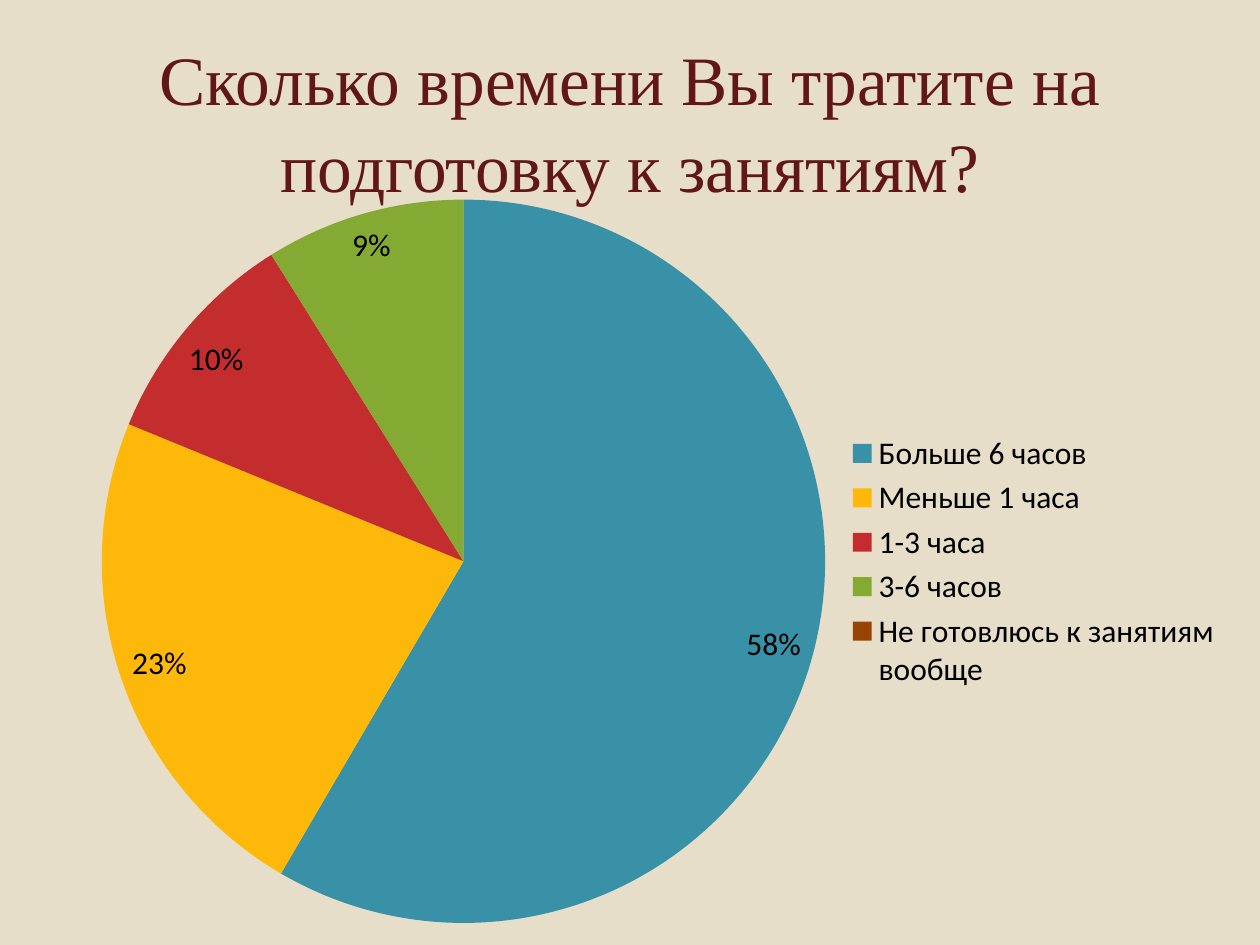
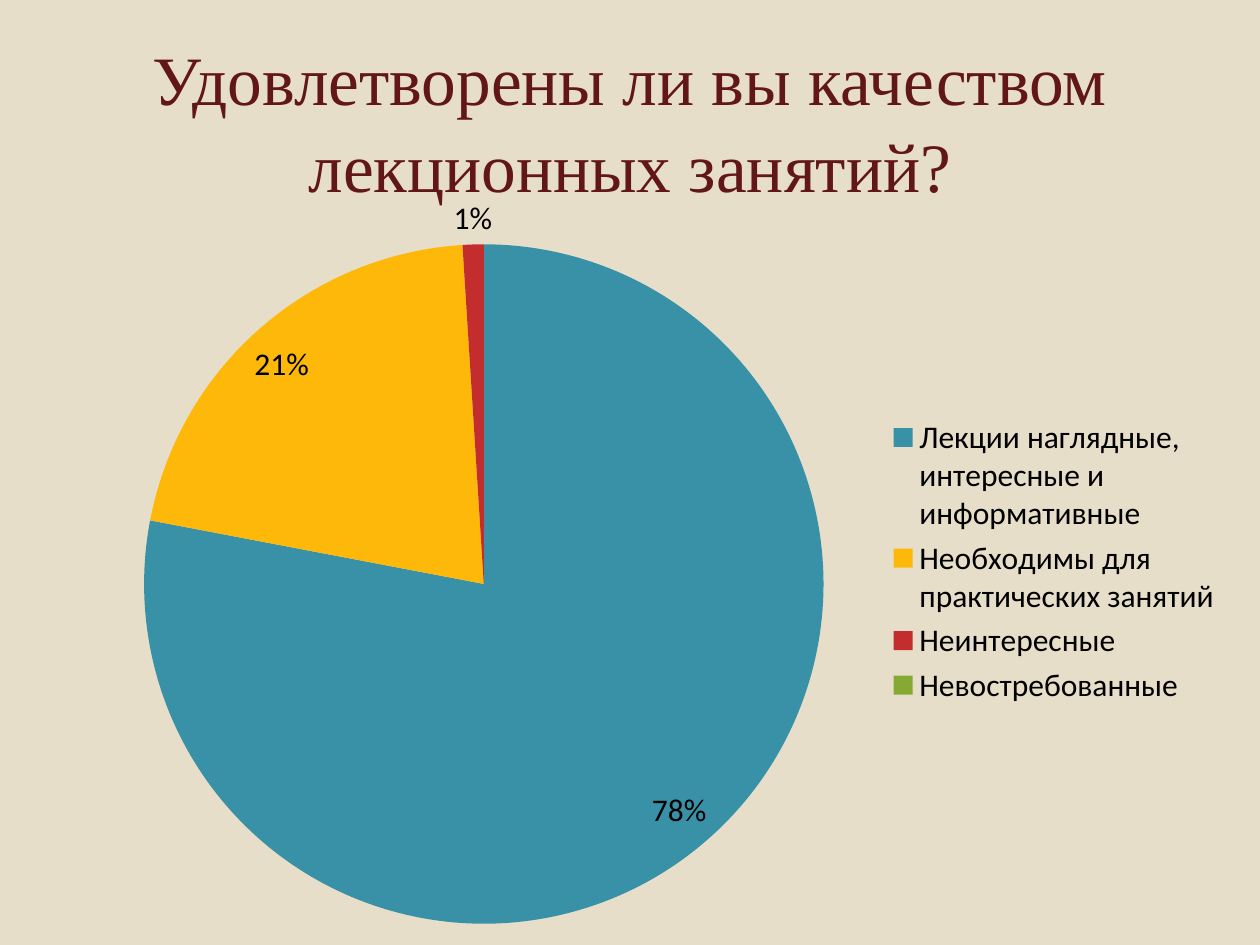
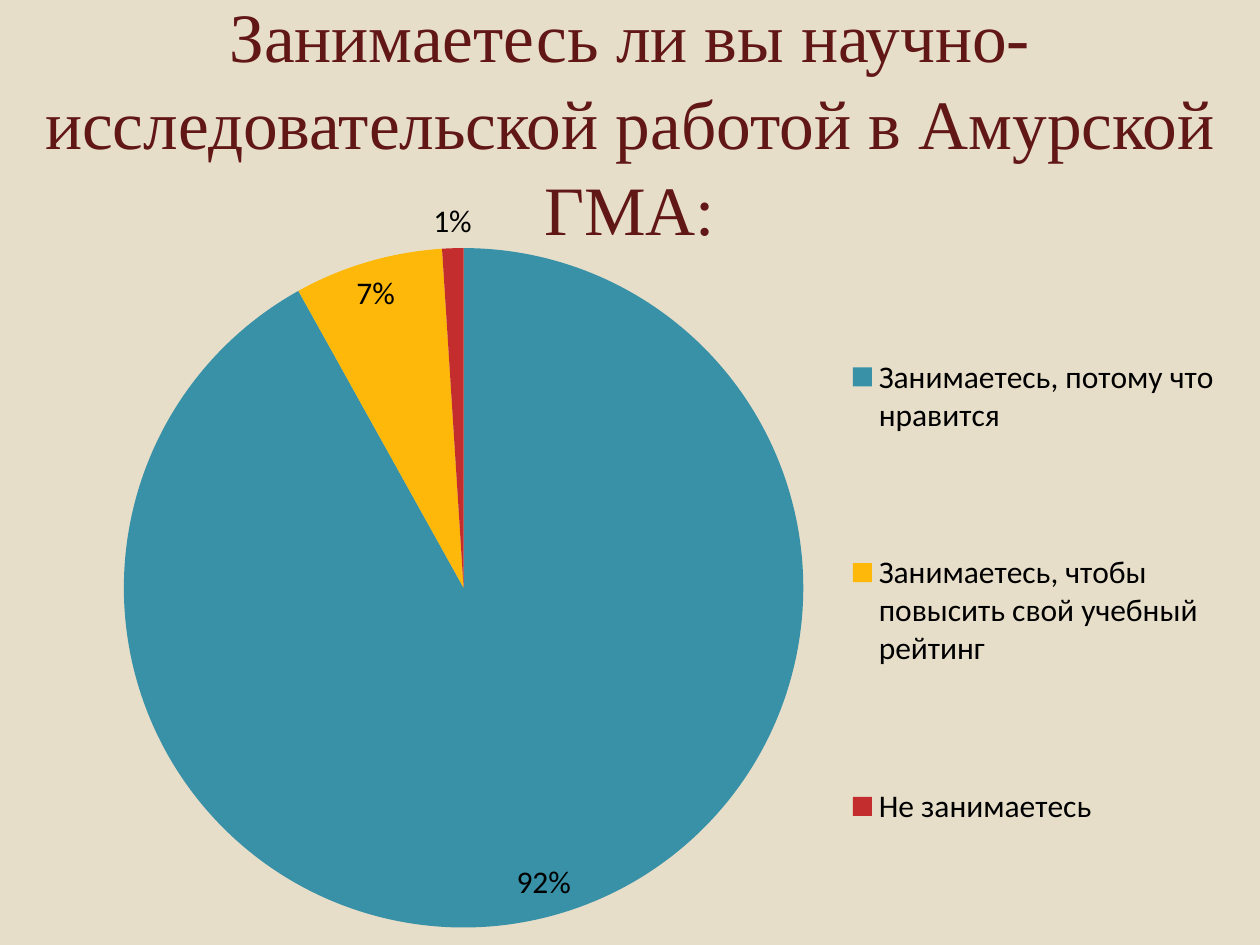
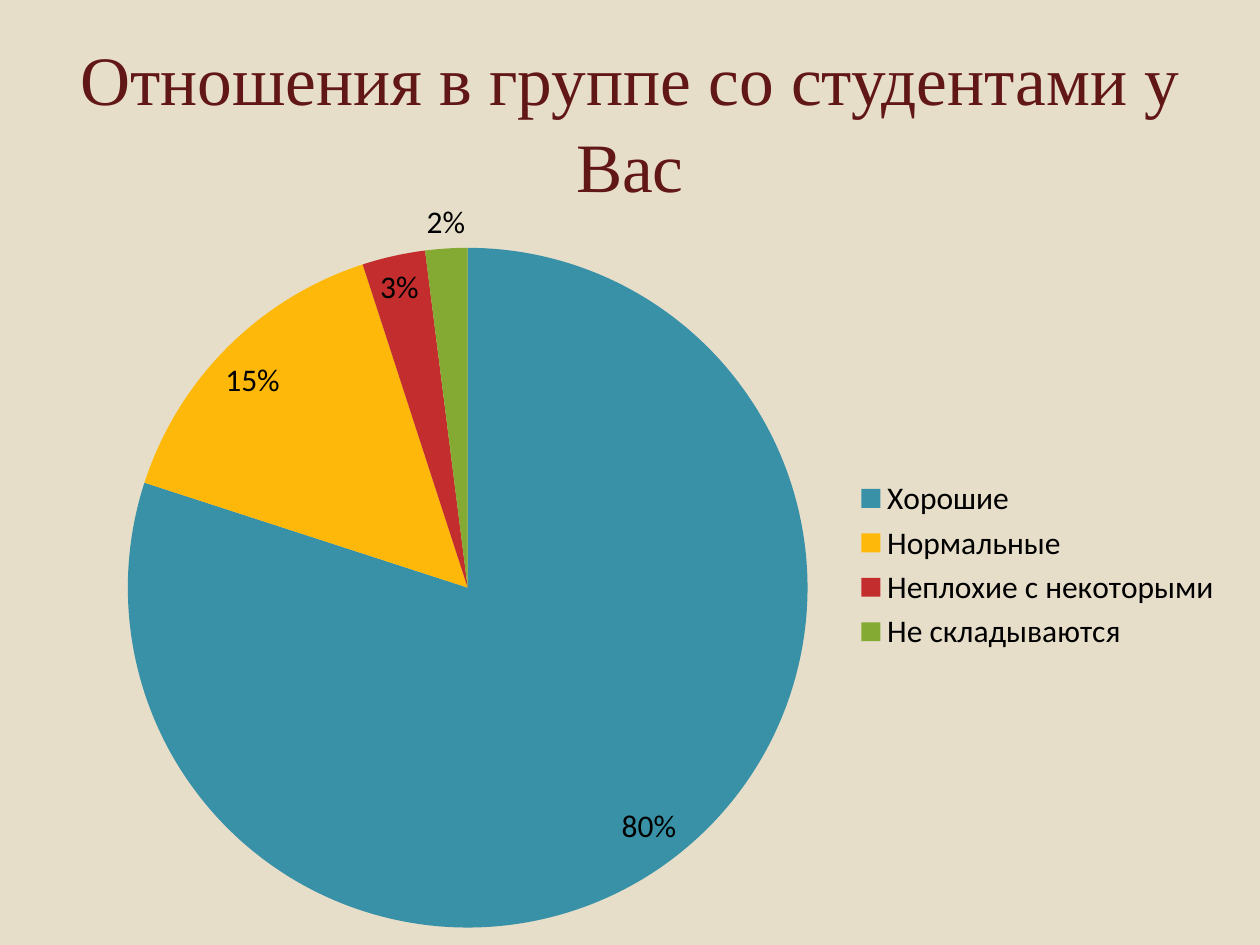
import pptx
import pptx.chart.data
import pptx.dml.color
import pptx.enum.chart
import pptx.enum.text
import pptx.oxml
import pptx.oxml.ns
import pptx.util

# Shared style
COLORS = {"background": "E7DEC9", "title": "621717", "text": "000000"}
SLICE_COLORS = ["3891A7", "FEB80A", "C32D2E", "84AA33", "964305"]
SLIDE_WIDTH, SLIDE_HEIGHT = 10, 7.5
TITLE_TOP, TITLE_HEIGHT = 0.3, 1.25
CHART_LEFT, CHART_WIDTH, CHART_HEIGHT = 0.67, 9.13, 6.03
TITLE_FONT = {"name": "Times New Roman", "size": pptx.util.Pt(39.6), "bold": False}
CHART_FONT = {"name": "Calibri", "size": pptx.util.Pt(18), "bold": False}

# Survey questions: answers map to shares in percent
SURVEY = [
    {
        "question": "Сколько времени Вы тратите на подготовку к занятиям?",
        "answers": {
            "Больше 6 часов": 59,
            "Меньше 1 часа": 23,
            "1-3 часа": 10,
            "3-6 часов": 9,
            "Не готовлюсь к занятиям вообще": None,
        },
    },
    {
        "question": "Удовлетворены ли вы качеством лекционных занятий?",
        "answers": {
            "Лекции наглядные, интересные и информативные": 78,
            "Необходимы для практических занятий": 21,
            "Неинтересные": 1,
            "Невостребованные": 0,
        },
    },
    {
        "question": "Занимаетесь ли вы научно-исследовательской работой в Амурской ГМА:",
        "answers": {
            "Занимаетесь, потому что нравится": 91,
            "Занимаетесь, чтобы повысить свой учебный рейтинг": 7,
            "Не занимаетесь": 1,
        },
        "title_margin": 0,
        "chart_top": 1.47,
        "legend_box": {"x": 0.66, "y": 0.07, "w": 0.33, "h": 0.93},
    },
    {
        "question": "Отношения в группе со студентами у Вас",
        "answers": {
            "Хорошие": 80,
            "Нормальные": 15,
            "Неплохие с некоторыми": 3,
            "Не складываются": 2,
        },
        "chart_top": 1.47,
    },
]


def rgb(value):
    return pptx.dml.color.RGBColor.from_string(value)


def inches(*lengths):
    return [pptx.util.Inches(length) for length in lengths]


def format_font(font, values, color):
    for name, value in values.items():
        setattr(font, name, value)
    font.color.rgb = rgb(color)


def set_title(slide, text, margin):
    title = slide.shapes.title
    title.left, title.top, title.width, title.height = inches(
        margin, TITLE_TOP, SLIDE_WIDTH - 2 * margin, TITLE_HEIGHT)
    frame = title.text_frame
    frame.text = text
    frame_format = {
        "word_wrap": True,
        "auto_size": pptx.enum.text.MSO_AUTO_SIZE.NONE,
        "vertical_anchor": pptx.enum.text.MSO_ANCHOR.MIDDLE,
        "margin_top": pptx.util.Inches(0.1),
    }
    for name, value in frame_format.items():
        setattr(frame, name, value)
    paragraph = frame.paragraphs[0]
    paragraph.alignment = pptx.enum.text.PP_ALIGN.CENTER
    paragraph.line_spacing = 1.04
    format_font(paragraph.runs[0].font, TITLE_FONT, COLORS["title"])


def place_legend(legend, box):
    """Fix the legend's box, given as shares of the chart's size."""
    namespace = pptx.oxml.ns.nsdecls("c")
    lengths = "".join(f'<c:{name} val="{value}"/>' for name, value in box.items())
    layout = pptx.oxml.parse_xml(
        f"<c:layout {namespace}><c:manualLayout>"
        '<c:xMode val="edge"/><c:yMode val="edge"/>'
        f"{lengths}</c:manualLayout></c:layout>")
    element = legend._element
    for previous in element.findall(pptx.oxml.ns.qn("c:layout")):
        element.remove(previous)
    element.find(pptx.oxml.ns.qn("c:legendPos")).addnext(layout)


def add_pie(slide, answers, top, legend_box):
    data = pptx.chart.data.CategoryChartData()
    data.categories = list(answers)
    data.add_series("Series 1", list(answers.values()))
    chart = slide.shapes.add_chart(
        pptx.enum.chart.XL_CHART_TYPE.PIE,
        *inches(CHART_LEFT, top, CHART_WIDTH, CHART_HEIGHT), data).chart
    chart.has_title = False
    format_font(chart.font, CHART_FONT, COLORS["text"])

    # Slices and their percentages
    plot = chart.plots[0]
    plot.vary_by_categories = True
    for index, color in enumerate(SLICE_COLORS[:len(answers)]):
        fill = plot.series[0].points[index].format.fill
        fill.solid()
        fill.fore_color.rgb = rgb(color)
    labels = plot.series[0].data_labels
    label_format = {
        "show_percentage": True,
        "show_value": False,
        "position": pptx.enum.chart.XL_LABEL_POSITION.BEST_FIT,
    }
    for name, value in label_format.items():
        setattr(labels, name, value)
    format_font(labels.font, CHART_FONT, COLORS["text"])

    # Legend
    chart.has_legend = True
    chart.legend.position = pptx.enum.chart.XL_LEGEND_POSITION.RIGHT
    chart.legend.include_in_layout = False
    format_font(chart.legend.font, CHART_FONT, COLORS["text"])
    if legend_box:
        place_legend(chart.legend, legend_box)


def main():
    presentation = pptx.Presentation()
    presentation.slide_width, presentation.slide_height = inches(SLIDE_WIDTH, SLIDE_HEIGHT)
    background = presentation.slide_master.background.fill
    background.solid()
    background.fore_color.rgb = rgb(COLORS["background"])

    title_only = presentation.slide_layouts.get_by_name("Title Only")
    for entry in SURVEY:
        slide = presentation.slides.add_slide(title_only)
        set_title(slide, entry["question"], entry.get("title_margin", 0.5))
        add_pie(slide, entry["answers"], entry.get("chart_top", 1.44), entry.get("legend_box"))
    presentation.save("out.pptx")


if __name__ == "__main__":
    main()
